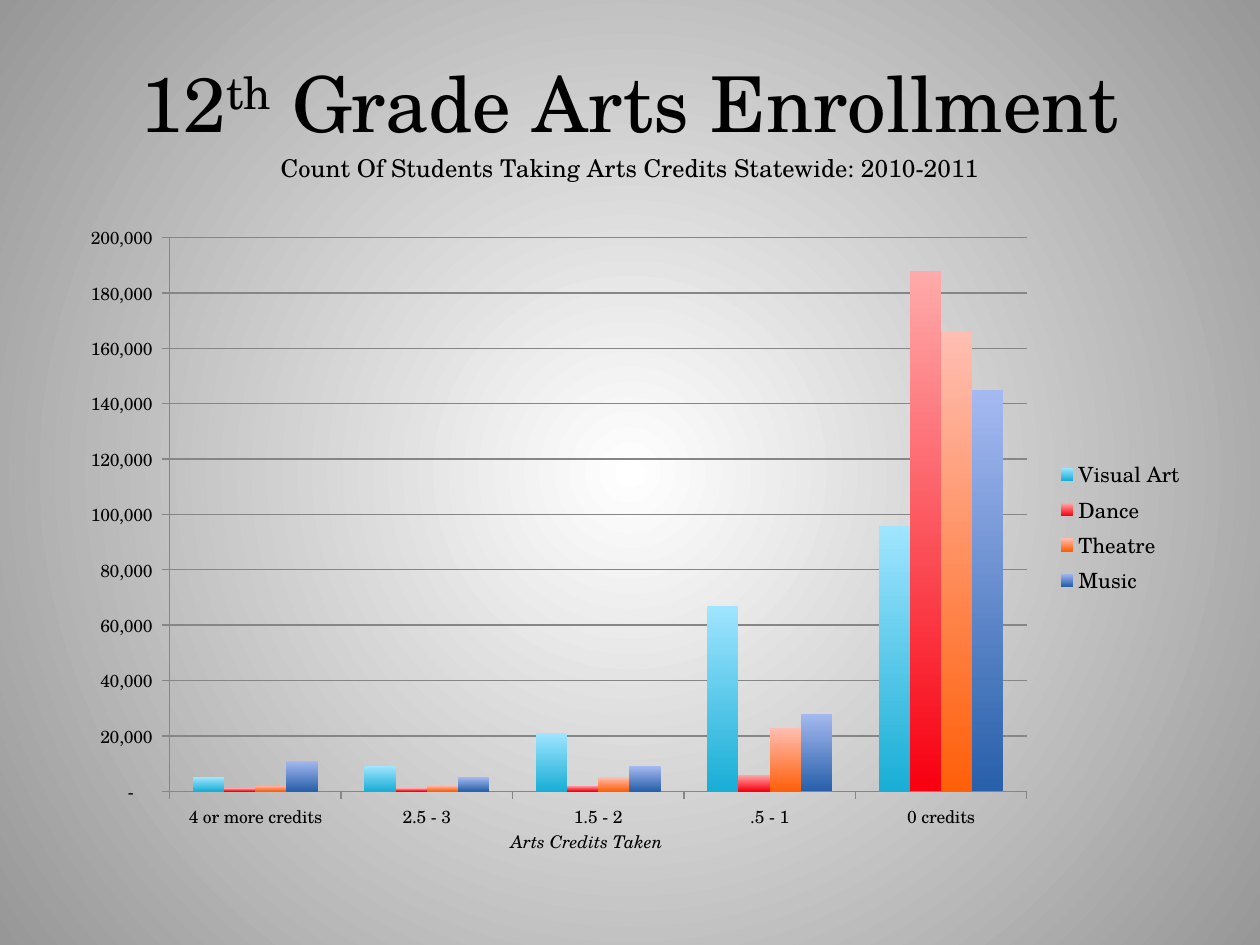
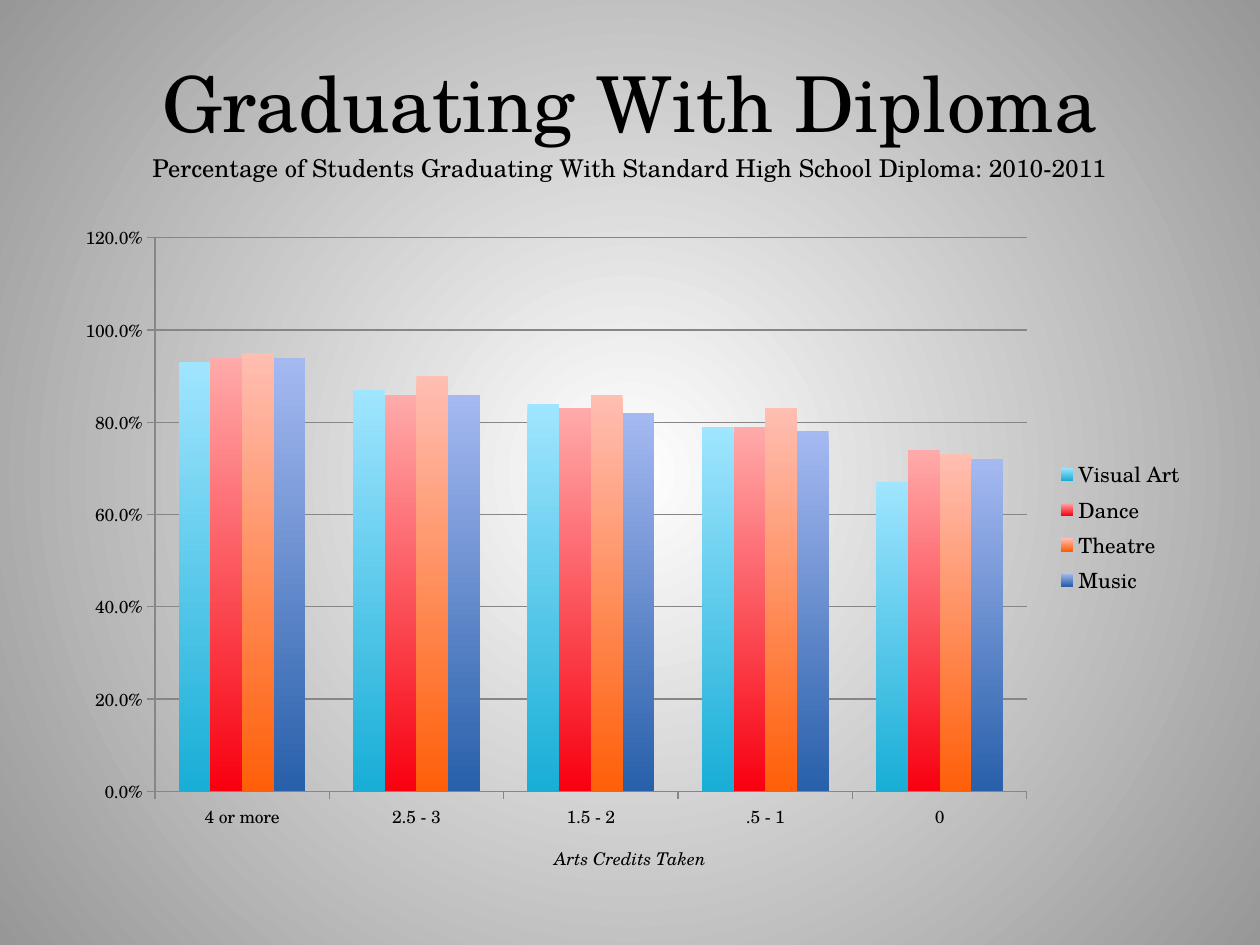
import pptx
import pptx.chart.data
import pptx.dml.color
import pptx.enum.chart
import pptx.enum.text
import pptx.oxml
import pptx.oxml.ns
import pptx.util

Pt = pptx.util.Pt
RGBColor = pptx.dml.color.RGBColor
qn = pptx.oxml.ns.qn

FONT = "TeX Gyre Schola"
BLACK = RGBColor(0x00, 0x00, 0x00)
WHITE = RGBColor(0xFF, 0xFF, 0xFF)
EDGE_GRAY = RGBColor(0x97, 0x97, 0x97)
LINE_GRAY = RGBColor(0x86, 0x86, 0x86)
# Top and bottom colour of each art's columns
ART_COLORS = {
    "Visual Art": (RGBColor(0xA0, 0xE5, 0xFF), RGBColor(0x18, 0xAE, 0xD6)),
    "Dance": (RGBColor(0xFF, 0xAA, 0xAA), RGBColor(0xF8, 0x00, 0x10)),
    "Theatre": (RGBColor(0xFF, 0xBE, 0xB2), RGBColor(0xFF, 0x5F, 0x08)),
    "Music": (RGBColor(0xA5, 0xB9, 0xF1), RGBColor(0x28, 0x60, 0xAA)),
}
LEFT, WIDTH = 36, 648
COUNT_FORMAT = r'_(* #,##0_);_(* \(#,##0\);_(* "-"??_);_('


def style_font(font, size, italic=False):
    font.name = FONT
    font.size = Pt(size)
    font.bold = False
    font.italic = italic
    font.color.rgb = BLACK


def write(paragraph, text, size=14, italic=False, superscript=False):
    """Add one centred run of text."""
    paragraph.alignment = pptx.enum.text.PP_ALIGN.CENTER
    run = paragraph.add_run()
    run.text = text
    style_font(run.font, size, italic)
    if superscript:
        run.font._element.set("baseline", "30000")


def set_gradient(fill, first, last):
    fill.gradient()
    for stop, color in zip(fill.gradient_stops, (first, last)):
        stop.color.rgb = color


class Deck:
    def __init__(self):
        self.presentation = pptx.Presentation()
        self.presentation.slide_width = Pt(720)
        self.presentation.slide_height = Pt(540)
        self.slide = None
        self.paint_background()

    def paint_background(self):
        """Give the master a radial gradient, white in the centre."""
        master = self.presentation.slide_master
        set_gradient(master.background.fill, WHITE, EDGE_GRAY)
        gradient = next(master.element.iter(qn("a:gradFill")))
        linear = gradient.find(qn("a:lin"))
        gradient.replace(linear, pptx.oxml.parse_xml(
            f'<a:path {pptx.oxml.ns.nsdecls("a")} path="circle">'
            '<a:fillToRect l="50000" t="50000" r="50000" b="50000"/></a:path>'))

    def add_slide(self, title_parts):
        """Start a slide; every second title part is superscript."""
        layout = self.presentation.slide_layouts[5]
        self.slide = self.presentation.slides.add_slide(layout)
        title = self.slide.shapes.title
        title.left, title.top = Pt(LEFT), Pt(13)
        title.width, title.height = Pt(WIDTH), Pt(90)
        frame = title.text_frame
        frame.auto_size = pptx.enum.text.MSO_AUTO_SIZE.NONE
        frame.vertical_anchor = pptx.enum.text.MSO_ANCHOR.MIDDLE
        for index, part in enumerate(title_parts):
            write(frame.paragraphs[0], part, size=44, superscript=index % 2 == 1)

    def add_text(self, text, left, top, width, height, **text_format):
        box = self.slide.shapes.add_textbox(Pt(left), Pt(top), Pt(width), Pt(height))
        frame = box.text_frame
        frame.word_wrap = True
        frame.auto_size = pptx.enum.text.MSO_AUTO_SIZE.SHAPE_TO_FIT_TEXT
        write(frame.paragraphs[0], text, **text_format)

    def add_subtitle(self, text):
        self.add_text(text, LEFT, 84, WIDTH, 24.5)

    def add_axis_caption(self, left, top):
        self.add_text("Arts Credits Taken", left, top, 250.5, 19.5, size=10, italic=True)

    def add_column_chart(self, categories, values, number_format, maximum, step, plot_left):
        """Chart one value list per art; plot_left is a share of the chart width."""
        data = pptx.chart.data.CategoryChartData()
        data.categories = categories
        for art, art_values in zip(ART_COLORS, values):
            data.add_series(art, art_values)
        chart = self.slide.shapes.add_chart(
            pptx.enum.chart.XL_CHART_TYPE.COLUMN_CLUSTERED,
            Pt(LEFT), Pt(121.5), Pt(WIDTH), Pt(359.5), data).chart
        style_font(chart.font, 18)
        chart.has_title = False
        chart.has_legend = True
        chart.legend.position = pptx.enum.chart.XL_LEGEND_POSITION.RIGHT
        chart.legend.include_in_layout = False
        style_font(chart.legend.font, 12)

        plot = chart.plots[0]
        plot.gap_width = 150
        plot.overlap = 0
        plot.vary_by_categories = False
        for series in plot.series:
            fill = series.format.fill
            set_gradient(fill, *ART_COLORS[series.name])
            fill.gradient_angle = 270
            series.invert_if_negative = False

        value_axis = chart.value_axis
        value_axis.minimum_scale = 0
        value_axis.maximum_scale = maximum
        value_axis.major_unit = step
        value_axis.has_major_gridlines = True
        value_axis.tick_labels.number_format = number_format
        value_axis.tick_labels.number_format_is_linked = False
        for axis in (chart.category_axis, value_axis):
            axis.major_tick_mark = pptx.enum.chart.XL_TICK_MARK.OUTSIDE
            style_font(axis.tick_labels.font, 10)
        for lined in (chart.category_axis, value_axis, value_axis.major_gridlines):
            lined.format.line.color.rgb = LINE_GRAY
            lined.format.line.width = Pt(0.75)
        self.fix_plot_area(chart, plot_left)

    def fix_plot_area(self, chart, plot_left, plot_right=0.85):
        area = next(chart._chartSpace.iter(qn("c:plotArea")))
        for layout in area.findall(qn("c:layout")):
            area.remove(layout)
        sizes = {"x": plot_left, "y": 0.04, "w": plot_right - plot_left, "h": 0.88}
        area.insert(0, pptx.oxml.parse_xml(
            f'<c:layout {pptx.oxml.ns.nsdecls("c")}><c:manualLayout>'
            '<c:layoutTarget val="inner"/><c:xMode val="edge"/><c:yMode val="edge"/>'
            + "".join(f'<c:{name} val="{size:.3f}"/>' for name, size in sizes.items())
            + "</c:manualLayout></c:layout>"))


def main():
    deck = Deck()

    deck.add_slide(["12", "th", " Grade Arts Enrollment"])
    deck.add_column_chart(
        ["4 or more credits", "2.5 - 3", "1.5 - 2", ".5 - 1", "0 credits"],
        [[5000, 9000, 21000, 67000, 96000],
         [1000, 1000, 2000, 6000, 188000],
         [2000, 2000, 5000, 23000, 166000],
         [11000, 5000, 9000, 28000, 145000]],
        COUNT_FORMAT, maximum=200000, step=20000, plot_left=0.094)
    deck.add_subtitle("Count Of Students Taking Arts Credits Statewide: 2010-2011")
    deck.add_axis_caption(210, 471.5)

    deck.add_slide(["Graduating With Diploma"])
    deck.add_column_chart(
        ["4 or more", "2.5 - 3", "1.5 - 2", ".5 - 1", "0"],
        [[0.93, 0.87, 0.84, 0.79, 0.67],
         [0.94, 0.86, 0.83, 0.79, 0.74],
         [0.95, 0.90, 0.86, 0.83, 0.73],
         [0.94, 0.86, 0.82, 0.78, 0.72]],
        "0.0%", maximum=1.2, step=0.2, plot_left=0.081)
    deck.add_subtitle(
        "Percentage of Students Graduating With Standard High School Diploma: 2010-2011")
    deck.add_axis_caption(234.75, 481)

    deck.presentation.save("out.pptx")


if __name__ == "__main__":
    main()
